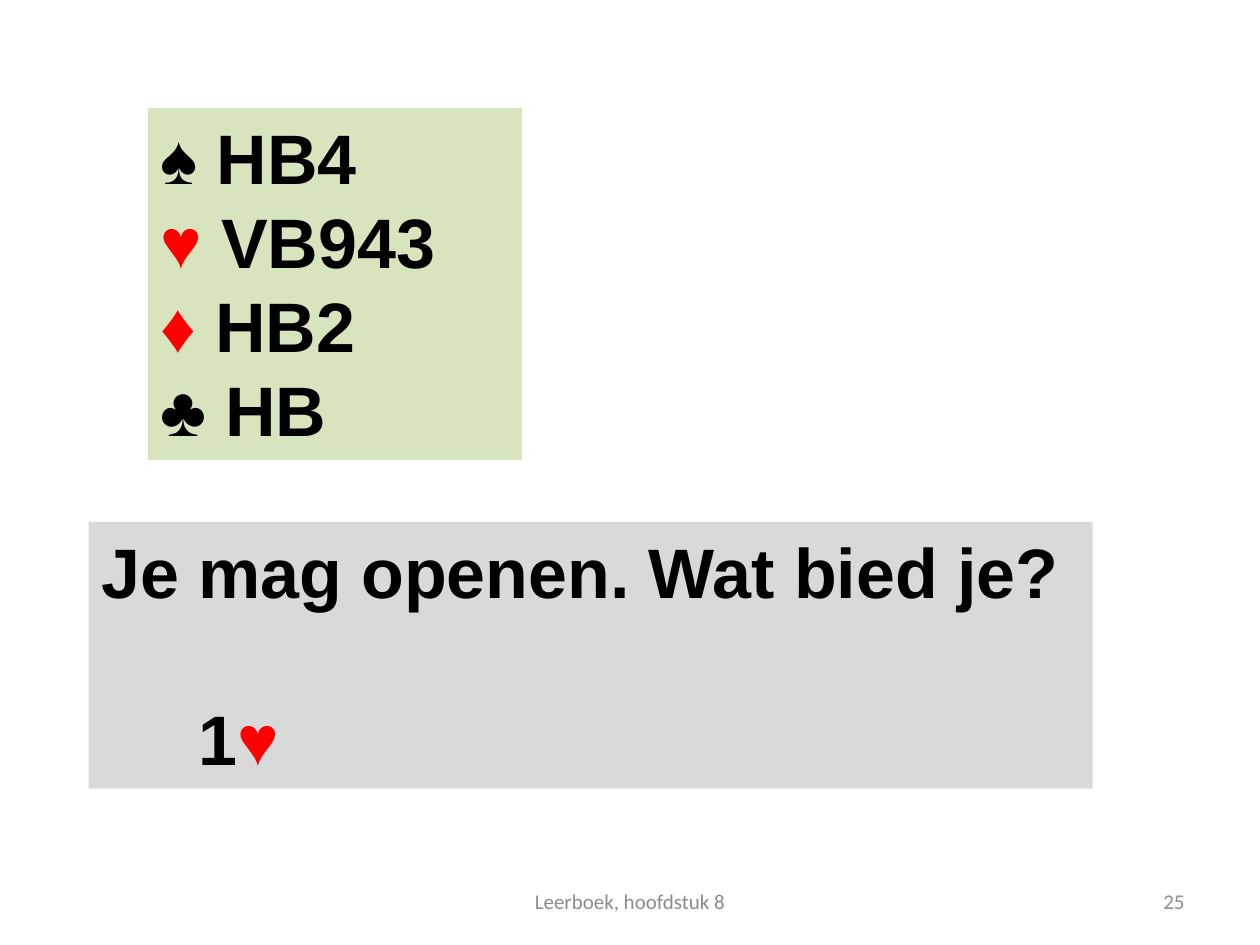
from pptx import Presentation
from pptx.dml.color import RGBColor
from pptx.enum.shapes import MSO_SHAPE
from pptx.enum.text import MSO_ANCHOR, PP_ALIGN
from pptx.util import Cm, Pt

RECTANGLE = MSO_SHAPE.RECTANGLE
TOP, MIDDLE = MSO_ANCHOR.TOP, MSO_ANCHOR.MIDDLE
LEFT, CENTER, RIGHT = PP_ALIGN.LEFT, PP_ALIGN.CENTER, PP_ALIGN.RIGHT
COLORS = {
    "hand": "D7E4BD",
    "question": "D9D9D9",
    "black": "000000",
    "red": "FF0000",
    "footer": "8C8C8C",
}
RED_SUITS = "♥♦"


def color(name):
    """Return the named colour."""
    return RGBColor.from_string(COLORS[name])


def add_panel(slide, box, fill):
    """Add a plain filled panel and return its text frame."""
    shape = slide.shapes.add_shape(RECTANGLE, *map(Cm, box))
    shape.shadow.inherit = False
    shape.fill.solid()
    shape.fill.fore_color.rgb = color(fill)
    shape.line.fill.background()
    frame = shape.text_frame
    frame.word_wrap = True
    frame.vertical_anchor = TOP
    return frame


def write_cards(paragraph, parts):
    """Write bold text parts, with the red suits in red."""
    paragraph.alignment = LEFT
    paragraph.font.name = "Arial"
    paragraph.font.size = Pt(40)
    paragraph.font.bold = True
    for part in parts:
        run = paragraph.add_run()
        run.text = part
        run.font.color.rgb = color("red" if part in RED_SUITS else "black")


def add_hand(slide, box, holdings):
    """Show a hand with one suit on each line."""
    frame = add_panel(slide, box, "hand")
    for index, (suit, cards) in enumerate(holdings):
        paragraph = frame.add_paragraph() if index else frame.paragraphs[0]
        write_cards(paragraph, [suit, f" {cards}"])


def add_question(slide, box, question, answer):
    """Show the question with the indented bid below it."""
    frame = add_panel(slide, box, "question")
    write_cards(frame.paragraphs[0], [question])
    paragraph = frame.add_paragraph()
    write_cards(paragraph, answer)
    paragraph.space_before = Pt(48)
    paragraph._p.get_or_add_pPr().set("marL", str(Cm(1.96)))


def add_footer(slide, box, text, alignment):
    """Add a small grey footer text."""
    frame = slide.shapes.add_textbox(*map(Cm, box)).text_frame
    frame.word_wrap = True
    frame.vertical_anchor = MIDDLE
    paragraph = frame.paragraphs[0]
    paragraph.text = text
    paragraph.alignment = alignment
    paragraph.font.name = "Calibri"
    paragraph.font.size = Pt(12)
    paragraph.font.color.rgb = color("footer")


def main():
    """Build the bidding slide."""
    presentation = Presentation()
    presentation.slide_width = Cm(25.4)
    presentation.slide_height = Cm(19.05)
    slide = presentation.slides.add_slide(presentation.slide_layouts[6])
    holdings = [("♠", "HB4"), ("♥", "VB943"), ("♦", "HB2"), ("♣", "HB")]
    add_hand(slide, (2.98, 2.18, 7.54, 7.09), holdings)
    add_question(slide, (1.79, 10.52, 20.24, 5.38),
                 "Je mag openen. Wat bied je?", ["1", "♥"])
    add_footer(slide, (18.2, 17.66, 5.93, 1.01), "25", RIGHT)
    add_footer(slide, (8.68, 17.66, 8.04, 1.01), "Leerboek, hoofdstuk 8", CENTER)
    presentation.save("out.pptx")


if __name__ == "__main__":
    main()
